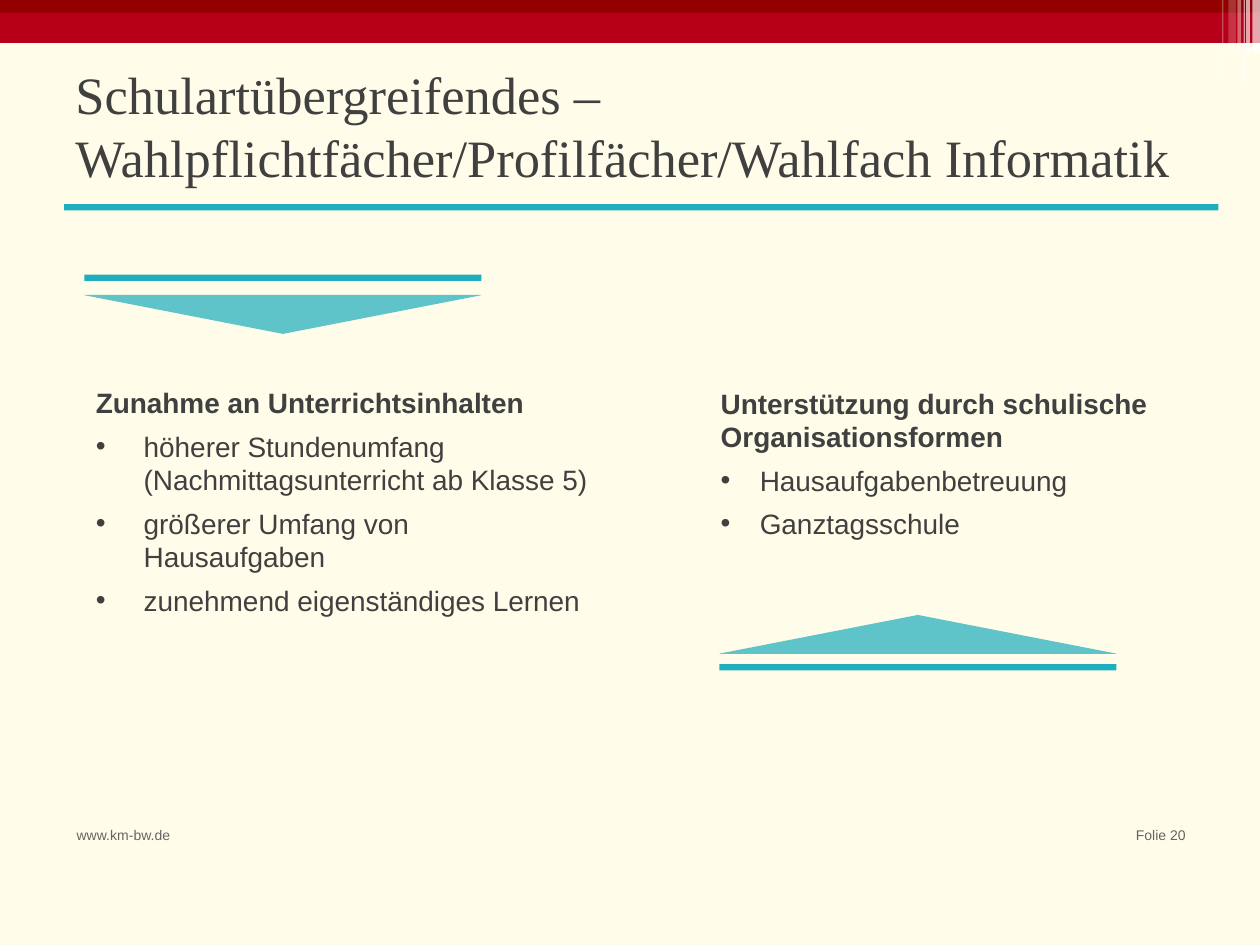
"""Build the slide on elective subjects, with two facing columns."""
import pptx
import pptx.util
import pptx.dml.color
import pptx.enum.shapes
import pptx.enum.text
import pptx.oxml
import pptx.oxml.ns

RGB = pptx.dml.color.RGBColor
CREAM = RGB(0xFF, 0xFD, 0xE9)
RED = RGB(0xB7, 0x00, 0x17)
DARK = RGB(0x92, 0x00, 0x00)
WHITE = RGB(0xFF, 0xFF, 0xFF)
TEAL = RGB(0x1E, 0xAE, 0xBD)
INK = RGB(0x40, 0x40, 0x40)
GREY = RGB(0x64, 0x64, 0x64)

KIND = pptx.enum.shapes.MSO_SHAPE
SIDE = pptx.enum.text.PP_ALIGN
HOLD = pptx.enum.text.MSO_ANCHOR
INCH = pptx.util.Inches
WIDE, HIGH = 10, 7.5

TITLE = ["Schulartübergreifendes –",
         "Wahlpflichtfächer/Profilfächer/Wahlfach Informatik"]
FOOT = [("www.km-bw.de", 0.51, 1, SIDE.LEFT),
        ("Folie 20", 8.54, 0.97, SIDE.RIGHT)]
BANDS = [(0.34, RED), (0.1, DARK)]
STRIPES = [(9.89, 0.03, 0.43, 65), (9.94, 0.06, 0.43, 65),
           (9.7, 0.01, 0.64, 30), (9.87, 0.01, 0.68, 60),
           (9.75, 0.06, 0.43, 20), (9.82, 0.03, 0.43, 40)]
COLUMNS = [
    {"box": (0.67, 2.88, 4.09, 2.2), "dent": 0.38,
     "head": "Zunahme an Unterrichtsinhalten",
     "items": ["höherer Stundenumfang \v(Nachmittagsunterricht ab Klasse 5)",
               "größerer Umfang von Hausaufgaben",
               "zunehmend eigenständiges Lernen"],
     "mark": (0.67, 2.34), "bar": 2.18, "turn": 90},
    {"box": (5.63, 2.89, 3.78, 1.57), "dent": 0.31,
     "head": "Unterstützung durch schulische Organisationsformen",
     "items": ["Hausaufgabenbetreuung", "Ganztagsschule"],
     "mark": (5.71, 4.88), "bar": 5.27, "turn": 270},
]
SPAN, DEEP, THIN = 3.15, 0.31, 0.05


def block(slide, box, fill, alpha=100, kind=KIND.RECTANGLE):
    shape = slide.shapes.add_shape(kind, *map(INCH, box))
    shape.shadow.inherit = False
    shape.line.fill.background()
    shape.fill.solid()
    shape.fill.fore_color.rgb = fill
    if alpha < 100:
        tone = shape.fill._xPr.find(".//" + pptx.oxml.ns.qn("a:srgbClr"))
        pptx.oxml.ns.qn("a:alpha")
        node = pptx.oxml.parse_xml(
            f'<a:alpha {pptx.oxml.ns.nsdecls("a")} val="{alpha * 1000}"/>')
        tone.append(node)
    return shape


def frame(slide, box, hold=HOLD.TOP):
    text = slide.shapes.add_textbox(*map(INCH, box)).text_frame
    text.word_wrap = True
    text.vertical_anchor = hold
    return text


def write(text, words, size, tint, face="Arial", bold=False):
    first = text.paragraphs[0]
    para = text.add_paragraph() if first.runs else first
    for num, part in enumerate(words.split("\v")):
        if num:
            para.add_line_break()
        run = para.add_run()
        run.text = part
        run.font.name = face
        run.font.size = pptx.util.Pt(size)
        run.font.bold = bold
        run.font.color.rgb = tint
    return para


def bullet(para, dent):
    props = para._p.get_or_add_pPr()
    props.set("marL", str(INCH(dent)))
    props.set("indent", str(-INCH(dent)))
    for tag in ('buFont {} typeface="Arial"', 'buChar {} char="•"'):
        props.append(pptx.oxml.parse_xml(
            "<a:" + tag.format(pptx.oxml.ns.nsdecls("a")) + "/>"))


def column(slide, data):
    text = frame(slide, data["box"], HOLD.MIDDLE)
    text.margin_left = text.margin_right = INCH(0.09)
    text.margin_top = text.margin_bottom = INCH(0.09)
    write(text, data["head"], 16, INK, bold=True)
    for item in data["items"]:
        bullet(write(text, item, 16, INK), data["dent"])
    for para in text.paragraphs:
        para.space_after = pptx.util.Pt(5.6)
    left, top = data["mark"]
    shift = (SPAN - DEEP) / 2
    wedge = block(slide, (left + shift, top - shift, DEEP, SPAN),
                  TEAL, 71, KIND.PENTAGON)
    wedge.adjustments[0] = 0.99
    wedge.rotation = data["turn"]
    block(slide, (left, data["bar"], SPAN, THIN), TEAL)


def main():
    deck = pptx.Presentation()
    deck.slide_width, deck.slide_height = INCH(WIDE), INCH(HIGH)
    slide = deck.slides.add_slide(deck.slide_layouts[6])
    slide.background.fill.solid()
    slide.background.fill.fore_color.rgb = CREAM
    for tall, tint in BANDS:
        block(slide, (0, 0, WIDE, tall), tint)
    for left, wide, tall, alpha in STRIPES:
        block(slide, (left, 0, wide, tall), WHITE, alpha)
    for words, left, wide, side in FOOT:
        text = frame(slide, (left, 6.51, wide, 0.39))
        write(text, words, 8, GREY).alignment = side
    for data in COLUMNS:
        column(slide, data)
    block(slide, (0.51, 1.62, 9.16, THIN), TEAL)
    text = frame(slide, (0.5, 0.61, 9, 0.77), HOLD.MIDDLE)
    for line in TITLE:
        write(text, line, 30, INK, "Times New Roman")
    deck.save("out.pptx")


if __name__ == "__main__":
    main()
